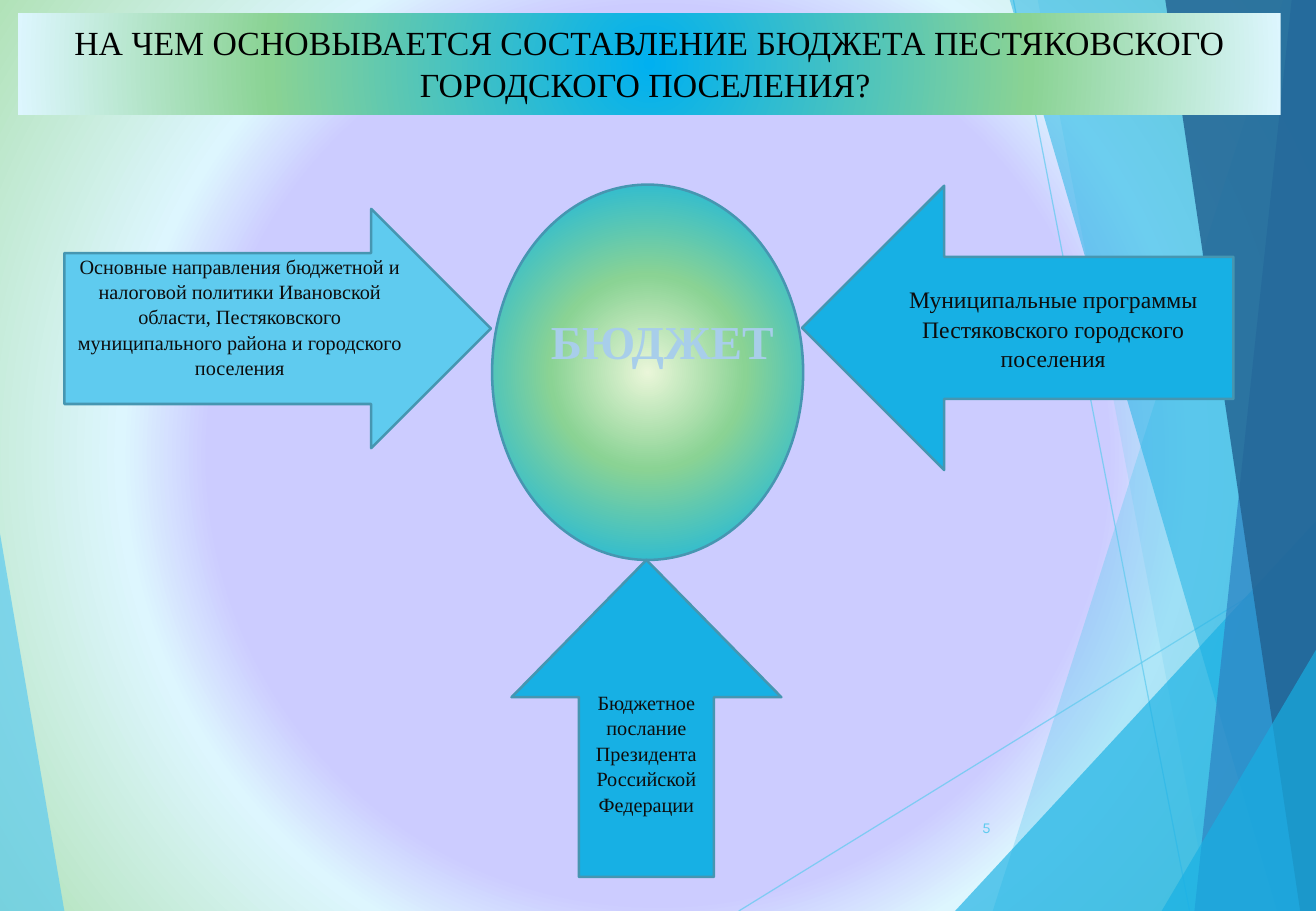
from lxml.etree import SubElement
from pptx import Presentation
from pptx.dml.color import RGBColor
from pptx.enum.shapes import MSO_CONNECTOR, MSO_SHAPE
from pptx.enum.text import MSO_ANCHOR, MSO_AUTO_SIZE, PP_ALIGN
from pptx.oxml.ns import qn
from pptx.util import Inches, Pt

COLORS = {
    "sky": "5FCBEF", "azure": "17B0E4", "blue": "2E83C3", "navy": "226292",
    "border": "4696B1", "pale": "A8CEEA", "ink": "0D0D0D", "black": "000000",
    "lilac": "CCCCFF", "ice": "DDF6FE", "mint": "B1E2B8", "bright": "00B0F0",
    "green": "8AD394", "cream": "EAF6D9",
}
SERIF = "Times New Roman"
WIDTH, HEIGHT = 10.83, 7.5

BACKGROUND_STOPS = [(56, "lilac"), (67, "ice"), (100, "mint")]
TITLE_STOPS = [(0, "bright"), (60, "green"), (100, "ice")]
BUDGET_STOPS = [(0, "cream"), (40, "green"), (99, "bright"), (100, "ice")]

# Corner points, colour, opacity in percent
LEFT_FACET = ([(0, 4.39), (0.53, HEIGHT), (0, HEIGHT)], "sky", 70)
RIGHT_FACETS = [
    ([(10.56, 0), (8.17, HEIGHT), (WIDTH, HEIGHT), (WIDTH, 0)], "sky", 36),
    ([(8.54, 0), (9.96, HEIGHT), (WIDTH, HEIGHT), (WIDTH, 0)], "sky", 20),
    ([(7.86, HEIGHT), (WIDTH, 4.29), (WIDTH, HEIGHT)], "azure", 66),
    ([(8.31, 0), (10.51, HEIGHT), (WIDTH, HEIGHT), (WIDTH, 0)], "azure", 50),
    ([(10.63, 0), (9.83, HEIGHT), (WIDTH, HEIGHT), (WIDTH, 0)], "blue", 70),
    ([(9.59, 0), (10.7, HEIGHT), (WIDTH, HEIGHT), (WIDTH, 0)], "navy", 82),
    ([(9.56, HEIGHT), (WIDTH, 5.35), (WIDTH, HEIGHT)], "azure", 66),
]
FACET_LINES = [(6.08, HEIGHT, WIDTH, 4.57), (8.34, 0, 9.79, HEIGHT)]

TITLE = "НА ЧЕМ ОСНОВЫВАЕТСЯ СОСТАВЛЕНИЕ БЮДЖЕТА ПЕСТЯКОВСКОГО ГОРОДСКОГО ПОСЕЛЕНИЯ? "
TITLE_BOX = (0.15, 0.11, 10.39, 0.77)
BUDGET_BOX = (4.05, 1.52, 2.56, 3.09)
BUDGET_LABEL_BOX = (3.91, 2.5, 3.08, 0.57)
NUMBER_BOX = (7.64, 6.61, 0.61, 0.4)

# Shape, box, adjustments, fill, text size, bottom inset, text
ARROWS = [
    (MSO_SHAPE.LEFT_ARROW, (6.6, 1.53, 3.55, 2.34), (0.5, 0.5), "azure", 14, 0.05,
     "Муниципальные программы Пестяковского городского поселения"),
    (MSO_SHAPE.UP_ARROW, (4.21, 4.61, 2.22, 2.61), (0.5, 0.509), "azure", 12, 0.05,
     "Бюджетное послание Президента Российской Федерации"),
    (MSO_SHAPE.RIGHT_ARROW, (0.53, 1.72, 3.51, 1.97), (0.631, 0.5), "sky", 12, 0.25,
     "Основные направления бюджетной и налоговой политики Ивановской области, "
     "Пестяковского муниципального района и городского поселения"),
]


def color(name):
    return RGBColor.from_string(COLORS[name])


def inches(values):
    return [Inches(value) for value in values]


def set_opacity(properties, percent):
    for rgb in properties.iter(qn("a:srgbClr")):
        SubElement(rgb, qn("a:alpha"), val=str(percent * 1000))


def set_radial_fill(fill, properties, stops):
    """Swap a solid fill for a gradient running outwards from the centre."""
    fill.solid()
    solid = properties.find(qn("a:solidFill"))
    gradient = SubElement(properties, qn("a:gradFill"), rotWithShape="1")
    properties.replace(solid, gradient)
    stop_list = SubElement(gradient, qn("a:gsLst"))
    for position, name in stops:
        stop = SubElement(stop_list, qn("a:gs"), pos=str(position * 1000))
        SubElement(stop, qn("a:srgbClr"), val=COLORS[name])
    path = SubElement(gradient, qn("a:path"), path="circle")
    SubElement(path, qn("a:fillToRect"), l="50000", t="50000", r="50000", b="50000")


def write_text(shape, text, size, ink, font=SERIF, align=PP_ALIGN.CENTER,
               anchor=MSO_ANCHOR.MIDDLE, bold=False):
    frame = shape.text_frame
    frame.word_wrap = True
    frame.vertical_anchor = anchor
    paragraph = frame.paragraphs[0]
    paragraph.alignment = align
    paragraph.line_spacing = 1.05
    run = paragraph.add_run()
    run.text = text
    run.font.size = Pt(size)
    run.font.name = font
    run.font.bold = bold
    run.font.color.rgb = color(ink)
    return run


def add_facet(slide, points, fill, opacity):
    corners = [inches(point) for point in points]
    builder = slide.shapes.build_freeform(*corners[0])
    builder.add_line_segments(corners[1:], close=True)
    facet = builder.convert_to_shape()
    facet.shadow.inherit = False
    facet.fill.solid()
    facet.fill.fore_color.rgb = color(fill)
    set_opacity(facet.element.spPr, opacity)
    facet.line.fill.background()


def add_facet_line(slide, ends):
    connector = slide.shapes.add_connector(MSO_CONNECTOR.STRAIGHT, *inches(ends))
    connector.line.color.rgb = color("sky")
    connector.line.width = Pt(0.75)
    properties = connector.element.spPr
    set_opacity(properties, 70)
    SubElement(properties, qn("a:effectLst"))


def add_bordered_shape(slide, kind, box):
    shape = slide.shapes.add_shape(kind, *inches(box))
    shape.shadow.inherit = False
    shape.line.color.rgb = color("border")
    shape.line.width = Pt(1.5)
    return shape


def add_title(slide):
    title = slide.shapes.title
    title.left, title.top, title.width, title.height = inches(TITLE_BOX)
    set_radial_fill(title.fill, title.element.spPr, TITLE_STOPS)
    write_text(title, TITLE, 20, "black", anchor=MSO_ANCHOR.TOP)
    title.text_frame.auto_size = MSO_AUTO_SIZE.SHAPE_TO_FIT_TEXT
    # Bring the title in front of the facets
    title.element.getparent().append(title.element)


def add_budget(slide):
    ellipse = add_bordered_shape(slide, MSO_SHAPE.OVAL, BUDGET_BOX)
    set_radial_fill(ellipse.fill, ellipse.element.spPr, BUDGET_STOPS)


def add_budget_label(slide):
    label = slide.shapes.add_textbox(*inches(BUDGET_LABEL_BOX))
    run = write_text(label, "БЮДЖЕТ", 28, "pale", anchor=MSO_ANCHOR.TOP, bold=True)
    properties = run.font.fill and run._r.get_or_add_rPr()
    outline = SubElement(properties, qn("a:ln"), w=str(Pt(1.75)))
    solid = SubElement(outline, qn("a:solidFill"))
    SubElement(solid, qn("a:srgbClr"), val=COLORS["blue"])
    properties.insert(0, outline)


def add_arrow(slide, kind, box, adjustments, fill, size, bottom, text):
    arrow = add_bordered_shape(slide, kind, box)
    for index, value in enumerate(adjustments):
        arrow.adjustments[index] = value
    arrow.fill.solid()
    arrow.fill.fore_color.rgb = color(fill)
    write_text(arrow, text, size, "ink")
    arrow.text_frame.margin_bottom = Inches(bottom)


def main():
    presentation = Presentation()
    presentation.slide_width, presentation.slide_height = inches((WIDTH, HEIGHT))
    slide = presentation.slides.add_slide(presentation.slide_layouts[5])
    background = slide.background.fill
    background.solid()
    set_radial_fill(background, slide.element.find(".//" + qn("p:bgPr")), BACKGROUND_STOPS)

    add_facet(slide, *LEFT_FACET)
    for ends in FACET_LINES:
        add_facet_line(slide, ends)
    for facet in RIGHT_FACETS:
        add_facet(slide, *facet)

    add_title(slide)
    add_budget(slide)
    for arrow in ARROWS:
        add_arrow(slide, *arrow)
    add_budget_label(slide)
    number = slide.shapes.add_textbox(*inches(NUMBER_BOX))
    write_text(number, "5", 9, "sky", font="Karla", align=PP_ALIGN.RIGHT)
    presentation.save("out.pptx")


if __name__ == "__main__":
    main()
